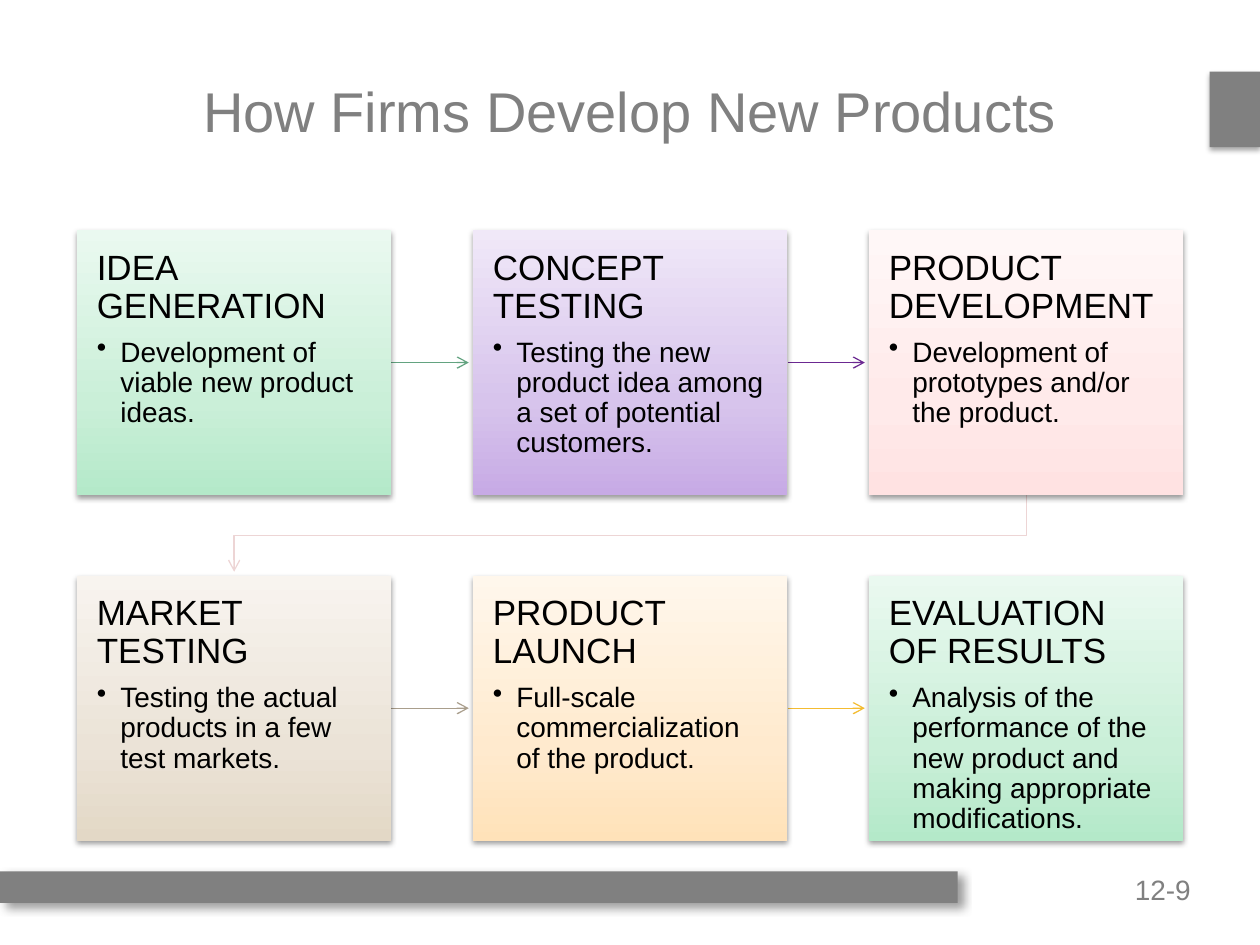
import pptx
import pptx.util
import pptx.dml.color
import pptx.enum.shapes
import pptx.enum.text
import pptx.oxml
import pptx.oxml.ns

Pt = pptx.util.Pt
Rgb = pptx.dml.color.RGBColor.from_string
qn = pptx.oxml.ns.qn
Align = pptx.enum.text.PP_ALIGN
Anchor = pptx.enum.text.MSO_ANCHOR
RECTANGLE = pptx.enum.shapes.MSO_SHAPE.RECTANGLE
STRAIGHT = pptx.enum.shapes.MSO_CONNECTOR.STRAIGHT

# Content: heading, explanation, palette, colour of the arrow that leaves the box
TITLE = "How Firms Develop New Products"
PAGE_NUMBER = "12-9"
STEPS = [
    ("IDEA GENERATION", "Development of viable new product ideas.", "green", "63A380"),
    ("CONCEPT TESTING", "Testing the new product idea among a set of potential customers.",
     "purple", "6B2891"),
    ("PRODUCT DEVELOPMENT", "Development of prototypes and/or the product.", "pink", "EDD5D5"),
    ("MARKET TESTING", "Testing the actual products in a few test markets.", "sand", "A99E8C"),
    ("PRODUCT LAUNCH", "Full-scale commercialization of the product.", "orange", "F4BC31"),
    ("EVALUATION OF RESULTS", "Analysis of the performance of the new product and making "
     "appropriate modifications.", "green", None),
]

THEME = {
    "font": "Arial", "text": "000000", "gray": "808080", "paper": "FFFFFF",
    "title": 32, "heading": 20, "body": 16, "number": 16, "arrow": 0.75,
    # Gradient colours from the bottom up
    "green": ("B4E9C9", "CAEFD8", "EAF9F0"),
    "purple": ("C7AAE5", "D7C4EC", "F0E8F8"),
    "pink": ("FFE2E2", "FFEAEA", "FFF7F7"),
    "sand": ("E3D8C6", "EBE3D7", "F8F4EF"),
    "orange": ("FFE2B9", "FFEACE", "FFF7EC"),
}
GRADIENT_STOPS = (0, 35, 100)

# Grid in points
COLUMNS = 3
LEFT, TOP = 43.9, 131.5
BOX_WIDTH, BOX_HEIGHT = 179.8, 151.4
COLUMN_STEP, ROW_STEP = 226.3, 197.5
ARROW_GAP = 2.3
INSET = 11.4


def xml(tag, parent, **attributes):
    child = pptx.oxml.parse_xml(f"<{tag} {pptx.oxml.ns.nsdecls('a')}/>")
    for name, value in attributes.items():
        child.set(name, str(value))
    parent.append(child)
    return child


def write(para, text, size, color=THEME["text"], align=None, spacing=None, after=None,
          bullet_indent=None):
    para.alignment = align
    if spacing is not None:
        para.line_spacing = spacing
    if after is not None:
        para.space_after = Pt(after)
    if bullet_indent is not None:
        props = para._p.get_or_add_pPr()
        props.set("marL", str(Pt(bullet_indent)))
        props.set("indent", str(-Pt(bullet_indent)))
        xml("a:buChar", props, char="•")
    span = para.add_run()
    span.text = text
    span.font.name = THEME["font"]
    span.font.size = Pt(size)
    span.font.color.rgb = Rgb(color)


def set_insets(frame, inset):
    frame.margin_left = frame.margin_right = Pt(inset)
    frame.margin_top = frame.margin_bottom = Pt(inset)


def add_box(page, left, top, width, height, colors, blur, distance, angle, opacity):
    box = page.shapes.add_shape(RECTANGLE, Pt(left), Pt(top), Pt(width), Pt(height))
    box.line.fill.background()
    if len(colors) == 1:
        box.fill.solid()
        box.fill.fore_color.rgb = Rgb(colors[0])
    else:
        box.fill.gradient()
        box.fill.gradient_angle = 90
        stops = box._element.spPr.find(".//" + qn("a:gsLst"))
        for old in list(stops):
            stops.remove(old)
        for position, color in zip(GRADIENT_STOPS, colors):
            xml("a:srgbClr", xml("a:gs", stops, pos=position * 1000), val=color)
    # Soft shadow
    box.shadow.inherit = False
    effects = box._element.spPr.find(qn("a:effectLst"))
    shadow = xml("a:outerShdw", effects, blurRad=Pt(blur), dist=Pt(distance),
                 dir=angle * 60000, algn="tl", rotWithShape=0)
    xml("a:alpha", xml("a:srgbClr", shadow, val="000000"), val=opacity * 1000)
    return box


def add_arrow(page, points, color):
    points = [(Pt(x), Pt(y)) for x, y in points]
    if len(points) == 2:
        arrow = page.shapes.add_connector(STRAIGHT, *points[0], *points[1])
        xml("a:effectLst", arrow._element.spPr)
    else:
        builder = page.shapes.build_freeform(*points[0])
        builder.add_line_segments(points[1:], close=False)
        arrow = builder.convert_to_shape()
        arrow.fill.background()
        arrow.shadow.inherit = False
    arrow.line.color.rgb = Rgb(color)
    arrow.line.width = Pt(THEME["arrow"])
    xml("a:tailEnd", arrow.line._get_or_add_ln(), type="arrow")


def box_corner(index):
    row, column = divmod(index, COLUMNS)
    return LEFT + column * COLUMN_STEP, TOP + row * ROW_STEP


def arrow_points(index):
    left, top = box_corner(index)
    next_left, next_top = box_corner(index + 1)
    if top == next_top:
        middle = top + BOX_HEIGHT / 2
        return [(left + BOX_WIDTH, middle), (next_left - ARROW_GAP, middle)]
    # Down from the end of one row to the start of the next
    start, end = left + BOX_WIDTH / 2, next_left + BOX_WIDTH / 2
    bottom = top + BOX_HEIGHT
    turn = (bottom + next_top) / 2
    return [(start, bottom), (start, turn), (end, turn), (end, next_top - ARROW_GAP)]


def main():
    deck = pptx.Presentation()
    deck.slide_width, deck.slide_height = Pt(720), Pt(540)
    page = deck.slides.add_slide(deck.slide_layouts[5])
    page.background.fill.solid()
    page.background.fill.fore_color.rgb = Rgb(THEME["paper"])

    # Title
    title = page.shapes.title
    title.left, title.top, title.width, title.height = Pt(43.2), Pt(18), Pt(633.6), Pt(90)
    title.text_frame.vertical_anchor = Anchor.MIDDLE
    write(title.text_frame.paragraphs[0], TITLE, THEME["title"], THEME["gray"], Align.CENTER)

    # Gray bars and page number
    add_box(page, 691.2, 41, 28.8, 43.2, [THEME["gray"]], 3.1, 1.8, 90, 35)
    add_box(page, 0, 498, 547.2, 18, [THEME["gray"]], 5, 4, 45, 38)
    number = page.shapes.add_textbox(Pt(540), Pt(498), Pt(140.4), Pt(18)).text_frame
    number.word_wrap = True
    set_insets(number, 0)
    write(number.paragraphs[0], PAGE_NUMBER, THEME["number"], THEME["gray"], Align.RIGHT,
          spacing=1.02)

    # Steps and the arrows between them
    for index, (heading, explanation, palette, arrow_color) in enumerate(STEPS):
        if arrow_color:
            add_arrow(page, arrow_points(index), arrow_color)
        box = add_box(page, *box_corner(index), BOX_WIDTH, BOX_HEIGHT, THEME[palette],
                      3.1, 1.6, 90, 38)
        frame = box.text_frame
        frame.word_wrap = True
        frame.vertical_anchor = Anchor.TOP
        set_insets(frame, INSET)
        write(frame.paragraphs[0], heading, THEME["heading"], align=Align.LEFT,
              spacing=0.9, after=7)
        write(frame.add_paragraph(), explanation, THEME["body"], align=Align.LEFT,
              spacing=0.9, after=2.4, bullet_indent=13.5)

    deck.save("out.pptx")


if __name__ == "__main__":
    main()
